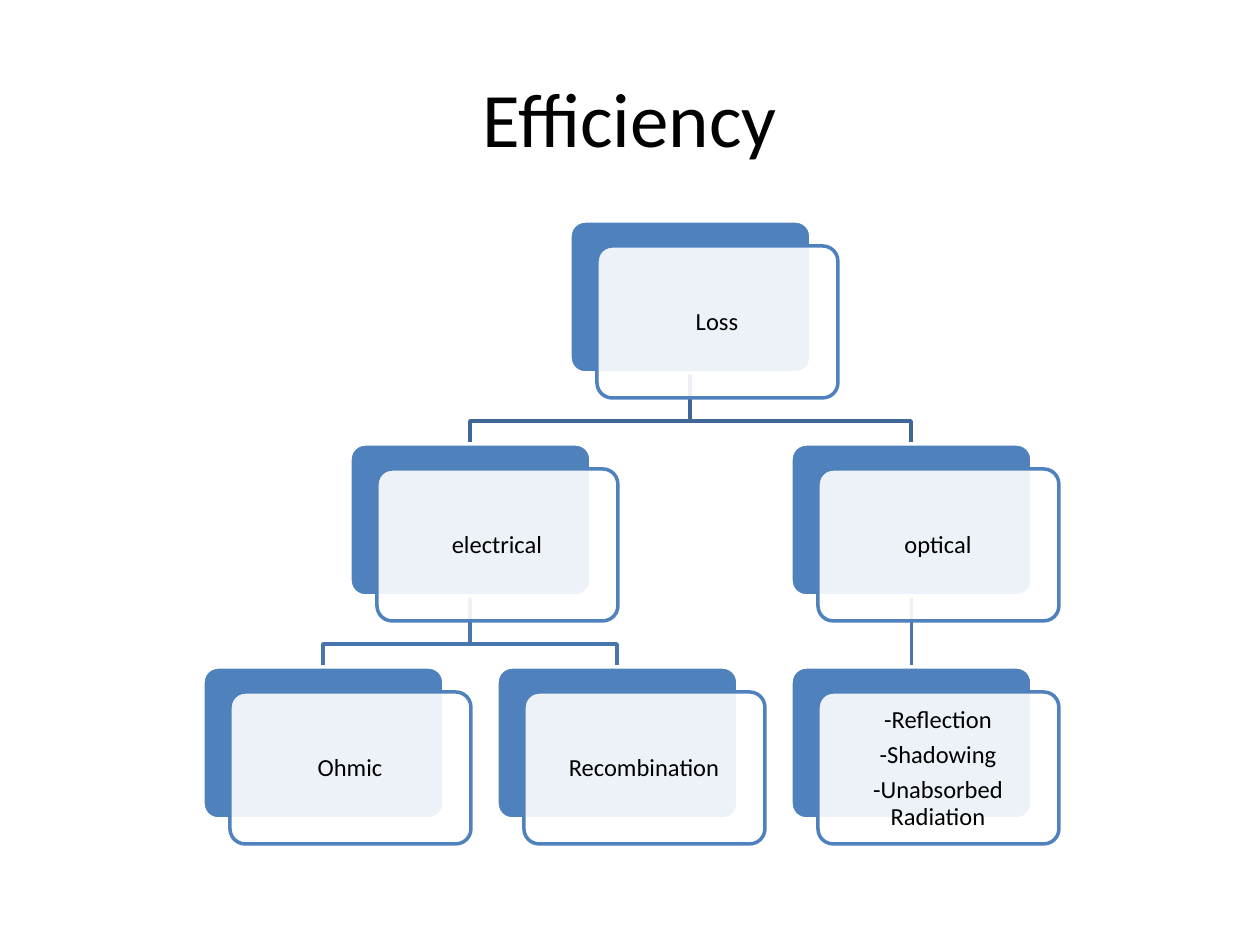
from lxml import etree
from pptx import Presentation
from pptx import util as u
from pptx.dml.color import RGBColor
from pptx.enum import shapes, text
from pptx.oxml import ns

PX = u.Inches(1) / 126
BLACK = RGBColor(0x00, 0x00, 0x00)
WHITE = RGBColor(0xFF, 0xFF, 0xFF)
BLUE = RGBColor(0x4F, 0x81, 0xBD)
LINK_COLORS = (RGBColor(0x3F, 0x67, 0x97), RGBColor(0x48, 0x75, 0xAC))

# Tree geometry in px
CARD_W, CARD_H = 241, 152
LEFT, TOP = 203, 221
COLUMN_STEP, ROW_STEP = 294, 223
TRUNK = 48

# Each node: paragraphs of its label, then its children
TREE = (["Loss"], [
    (["electrical"], [(["Ohmic"], []), (["Recombination"], [])]),
    (["optical"], [(["-Reflection", "-Shadowing", "-Unabsorbed Radiation"], [])]),
])


def px(length):
    return u.Emu(round(length * PX))


class TreeSlide:
    font = "Calibri"

    def __init__(self, deck):
        self.page = deck.slides.add_slide(deck.slide_layouts[5])
        self.leaf_count = 0

    def add_words(self, para, words, size):
        para.alignment = text.PP_ALIGN.CENTER
        span = para.add_run()
        span.text = words
        span.font.name = self.font
        span.font.size = u.Pt(size)
        span.font.color.rgb = BLACK

    def title(self, words, left, top, width, height):
        box = self.page.shapes.title
        box.left, box.top, box.width, box.height = map(px, (left, top, width, height))
        box.text_frame.vertical_anchor = text.MSO_ANCHOR.MIDDLE
        self.add_words(box.text_frame.paragraphs[0], words, 44)

    def panel(self, left, top, fill, line):
        shape = self.page.shapes.add_shape(
            shapes.MSO_SHAPE.ROUNDED_RECTANGLE, px(left), px(top), px(CARD_W), px(CARD_H))
        shape.adjustments[0] = 0.1
        shape.shadow.inherit = False
        shape.fill.solid()
        shape.fill.fore_color.rgb = fill
        shape.line.color.rgb = line
        shape.line.width = u.Pt(2)
        return shape

    def label(self, lines, left, top, width, height):
        box = self.page.shapes.add_textbox(*map(px, (left, top, width, height)))
        frame = box.text_frame
        frame.word_wrap = True
        frame.vertical_anchor = text.MSO_ANCHOR.MIDDLE
        frame.margin_left = frame.margin_right = u.Inches(0.06)
        frame.margin_top = frame.margin_bottom = u.Inches(0.06)
        for index, words in enumerate(lines):
            para = frame.add_paragraph() if index else frame.paragraphs[0]
            para.line_spacing = 0.9
            para.space_after = u.Pt(5)
            self.add_words(para, words, 14)

    def card(self, lines, left, top):
        back = self.panel(left, top, BLUE, WHITE)
        front = self.panel(left + 27, top + 25, WHITE, BLUE)
        color = front.element.spPr.find(".//" + ns.qn("a:srgbClr"))
        etree.SubElement(color, ns.qn("a:alpha"), val="90000")
        self.label(lines, left + 31, top + 30, 232, 144)
        return back

    def link(self, parent, child, start, end, color):
        """Join two cards, straight when aligned and with an elbow otherwise."""
        if start[0] == end[0]:
            line = self.page.shapes.add_connector(
                shapes.MSO_CONNECTOR.STRAIGHT, *map(px, start + end))
            line.begin_connect(parent, 2)
            line.end_connect(child, 0)
            etree.SubElement(line.element.spPr, ns.qn("a:effectLst"))
        else:
            bend = start[1] + TRUNK
            builder = self.page.shapes.build_freeform(*start, scale=PX)
            builder.add_line_segments(
                [(start[0], bend), (end[0], bend), end], close=False)
            line = builder.convert_to_shape()
            line.fill.background()
            line.shadow.inherit = False
        line.line.color.rgb = color
        line.line.width = u.Pt(2)
        # Links lie behind every card
        self.page.shapes.title.element.addnext(line.element)

    def place(self, node):
        """Give leaves equal columns and centre each parent over its children."""
        lines, children = node
        placed = [self.place(child) for child in children]
        if placed:
            left = (placed[0][1] + placed[-1][1]) // 2
        else:
            left = LEFT + self.leaf_count * COLUMN_STEP
            self.leaf_count += 1
        return lines, left, placed

    def draw(self, node, level=0):
        lines, left, children = node
        top = TOP + level * ROW_STEP
        parent = self.card(lines, left, top)
        middle = CARD_W // 2
        for child in children:
            child_card = self.draw(child, level + 1)
            self.link(parent, child_card, (left + middle, top + CARD_H),
                      (child[1] + middle, top + ROW_STEP), LINK_COLORS[level])
        return parent


def main():
    deck = Presentation()
    deck.slide_width, deck.slide_height = px(1260), px(945)
    slide = TreeSlide(deck)
    slide.title("Efficiency", 63, 38, 1134, 157)
    slide.draw(slide.place(TREE))
    deck.save("out.pptx")


if __name__ == "__main__":
    main()
